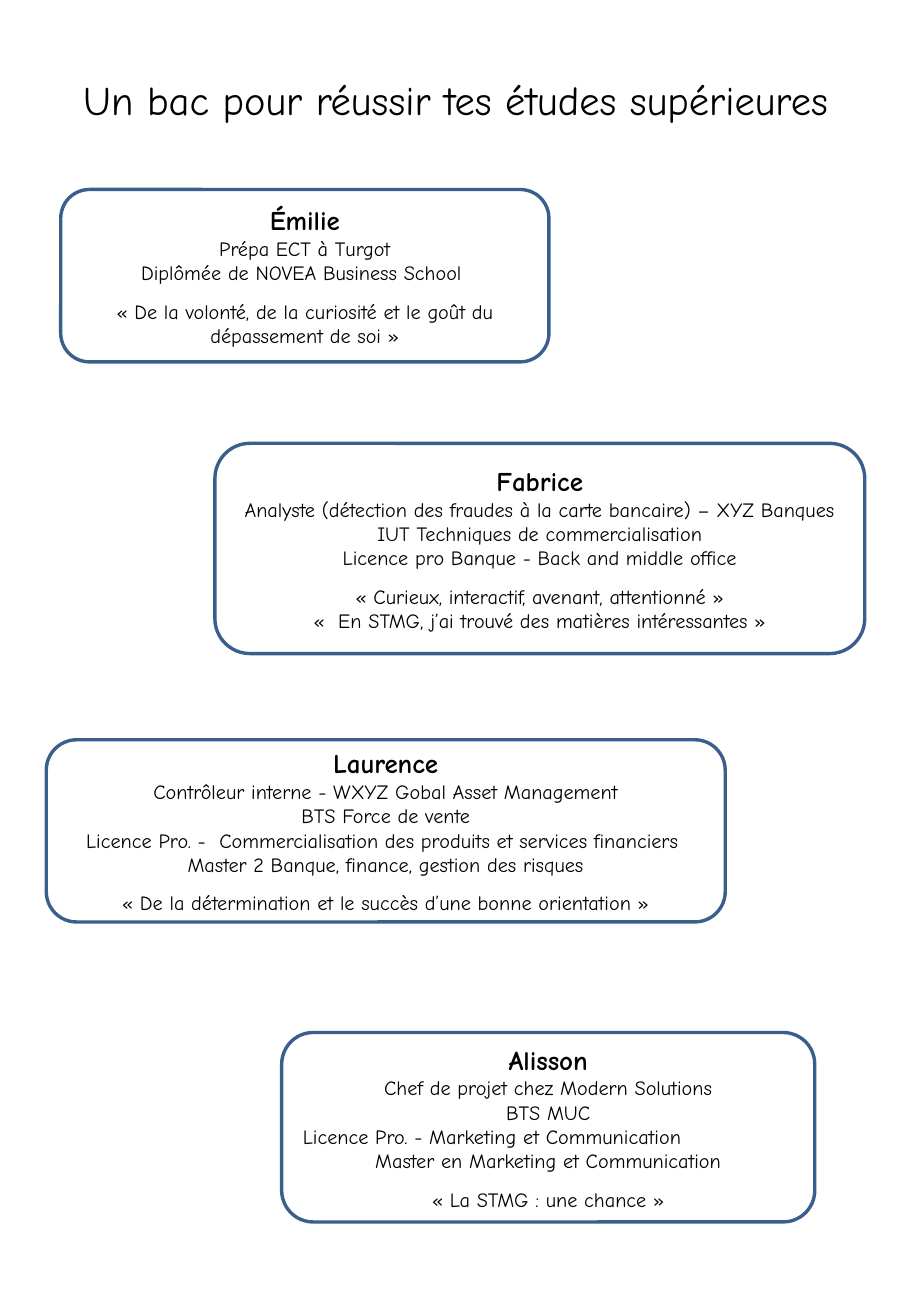
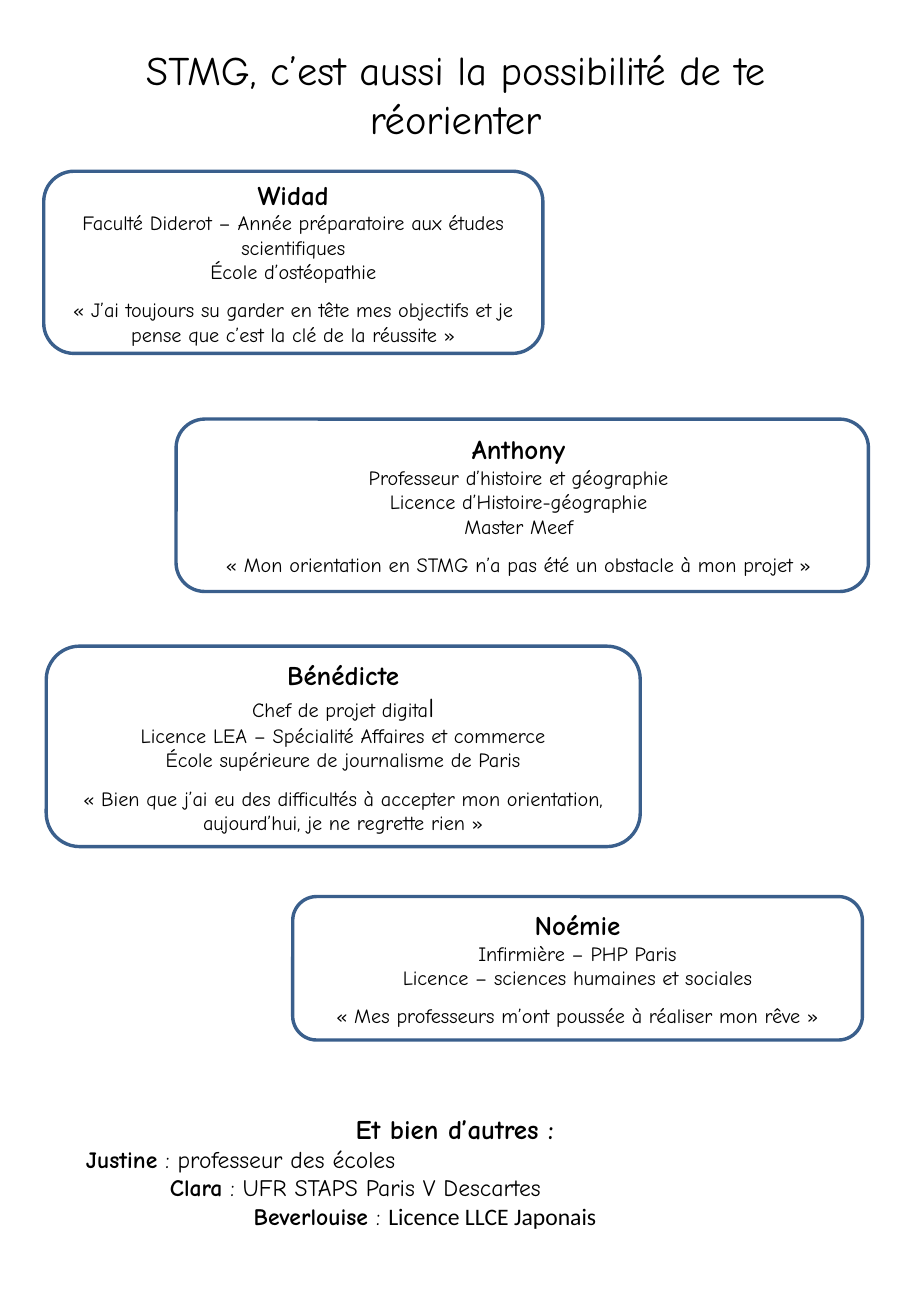
from dataclasses import dataclass

from pptx import Presentation
from pptx.dml.color import RGBColor
from pptx.enum.shapes import MSO_SHAPE
from pptx.enum.text import MSO_ANCHOR, MSO_AUTO_SIZE, PP_ALIGN
from pptx.presentation import Presentation as Deck
from pptx.slide import Slide
from pptx.text.text import TextFrame
from pptx.util import Pt

ROUNDED = MSO_SHAPE.ROUNDED_RECTANGLE
MIDDLE = MSO_ANCHOR.MIDDLE
LEFT, CENTER = PP_ALIGN.LEFT, PP_ALIGN.CENTER
NO_FIT, GROW = MSO_AUTO_SIZE.NONE, MSO_AUTO_SIZE.SHAPE_TO_FIT_TEXT

BLACK = RGBColor(0x00, 0x00, 0x00)
BORDER = RGBColor(0x3A, 0x5F, 0x8C)
FONT = "Comic Neue"
ALT_FONT = "Calibri"
NBSP = chr(160)

TITLE_SIZE, NAME_SIZE, LIST_SIZE, BODY_SIZE = 24, 16, 14, 12
QUOTE_GAP = 8.4
LIST_STEP = 49.7
TITLE_ONLY = 5


@dataclass
class Line:
    text: str
    align: PP_ALIGN = CENTER
    large_end: str = ""


@dataclass
class Card:
    box: tuple[float, float, float, float]
    name: str
    lines: list[str | Line]
    quotes: list[str]
    insets: tuple[float, float, float, float] = (7.2, 3.6, 7.2, 3.6)


@dataclass
class Alumna:
    name: str
    studies: str
    font: str = FONT


STUDY_CARDS = [
    Card((36, 112.3, 289.4, 102.2), "Émilie",
         ["Prépa ECT à Turgot", "Diplômée de NOVEA Business School "],
         ["De la volonté, de la curiosité et le goût du dépassement de soi"]),
    Card((127.4, 262.8, 385.2, 124.6), "Fabrice",
         ["Analyste (détection des fraudes à la carte bancaire) – XYZ Banques",
          "IUT Techniques de commercialisation",
          "Licence pro Banque - Back and middle office"],
         ["Curieux, interactif, avenant, attentionné",
          " En STMG, j’ai trouvé des matières intéressantes"]),
    Card((27.4, 438.5, 402.5, 108), "Laurence",
         ["Contrôleur interne - WXYZ Gobal Asset Management",
          "BTS Force de vente",
          "Licence Pro. -  Commercialisation des produits et services financiers ",
          "Master 2 Banque, finance, gestion des risques"],
         ["De la détermination et le succès d’une bonne orientation"],
         insets=(2.9, 3.6, 2.9, 3.6)),
    Card((167, 612, 316, 112.3), "Alisson",
         ["Chef de projet chez Modern Solutions",
          "BTS MUC",
          Line("Licence Pro. - Marketing et Communication", LEFT),
          "Master en Marketing et Communication"],
         ["La STMG : une chance"]),
]

REORIENTATION_CARDS = [
    Card((25.9, 101.5, 295.9, 108), "Widad",
         ["Faculté Diderot – Année préparatoire aux études scientifiques",
          "École d’ostéopathie"],
         ["J’ai toujours su garder en tête mes objectifs et je pense que "
          "c’est la clé de la réussite"]),
    Card((104.4, 248.4, 410.4, 102.2), "Anthony",
         ["Professeur d’histoire et géographie",
          "Licence d’Histoire-géographie",
          "Master Meef"],
         ["Mon orientation en STMG n’a pas été un obstacle à mon projet"],
         insets=(2.9, 2.9, 7.2, 3.6)),
    Card((27.4, 383, 352.1, 118.8), "Bénédicte",
         [Line("Chef de projet digita", large_end="l"),
          "Licence LEA – Spécialité Affaires et commerce",
          "École supérieure de journalisme de Paris"],
         ["Bien que j’ai eu des difficultés à accepter mon orientation, "
          "aujourd’hui, je ne regrette rien"]),
    Card((173.5, 531.4, 337.7, 85), "Noémie",
         ["Infirmière – PHP Paris", "Licence – sciences humaines et sociales"],
         ["Mes professeurs m’ont poussée à réaliser mon rêve"]),
]

ALUMNAE = [
    Alumna("Justine", "professeur des écoles"),
    Alumna("Clara", "UFR STAPS Paris V Descartes"),
    Alumna("Beverlouise", "Licence LLCE Japonais", ALT_FONT),
]


def add_paragraph(tf: TextFrame, text: str, size: float, bold: bool = False,
                  align: PP_ALIGN = CENTER):
    """Fill the frame's empty first paragraph, or append a new one."""
    p = tf.paragraphs[0] if not tf.text else tf.add_paragraph()
    p.alignment = align
    p.font.name, p.font.size, p.font.bold = FONT, Pt(size), bold
    p.font.color.rgb = BLACK
    if text:
        p.add_run().text = text
    return p


def add_titled_slide(prs: Deck, title: str, top: float) -> Slide:
    s = prs.slides.add_slide(prs.slide_layouts[TITLE_ONLY])
    sp = s.shapes.title
    sp.left, sp.top, sp.width, sp.height = Pt(27), Pt(top), Pt(486), Pt(47.5)
    tf = sp.text_frame
    tf.word_wrap, tf.auto_size, tf.vertical_anchor = True, NO_FIT, MIDDLE
    add_paragraph(tf, title, TITLE_SIZE)
    return s


def add_card(s: Slide, card: Card) -> None:
    sp = s.shapes.add_shape(ROUNDED, *map(Pt, card.box))
    sp.shadow.inherit = False
    sp.fill.background()
    sp.line.color.rgb, sp.line.width = BORDER, Pt(2)
    tf = sp.text_frame
    tf.word_wrap, tf.vertical_anchor = True, MIDDLE
    (tf.margin_left, tf.margin_top,
     tf.margin_right, tf.margin_bottom) = map(Pt, card.insets)

    add_paragraph(tf, card.name, NAME_SIZE, bold=True)
    for item in card.lines:
        line = item if isinstance(item, Line) else Line(item)
        p = add_paragraph(tf, line.text, BODY_SIZE, align=line.align)
        if line.large_end:
            r = p.add_run()
            r.text, r.font.size = line.large_end, Pt(NAME_SIZE)
    for i, quote in enumerate(card.quotes):
        p = add_paragraph(tf, f"«{NBSP}{quote}{NBSP}»", BODY_SIZE)
        if i == 0:
            p.space_before = Pt(QUOTE_GAP)


def add_alumnae(s: Slide) -> None:
    """List further alumnae, each line indented one step more."""
    sp = s.shapes.add_textbox(Pt(43.9), Pt(655.9), Pt(451.4), Pt(77.8))
    tf = sp.text_frame
    tf.word_wrap, tf.auto_size = True, GROW
    add_paragraph(tf, "Et bien d’autres :", NAME_SIZE, bold=True)
    for i, alumna in enumerate(ALUMNAE):
        p = add_paragraph(tf, "", LIST_SIZE, align=LEFT)
        p._p.get_or_add_pPr().set("indent", str(Pt(i * LIST_STEP)))
        for text, bold, font in ((alumna.name, True, FONT),
                                 (" : ", False, FONT),
                                 (alumna.studies, False, alumna.font)):
            r = p.add_run()
            r.text, r.font.bold, r.font.name = text, bold, font


def main() -> None:
    prs = Presentation()
    prs.slide_width, prs.slide_height = Pt(540), Pt(780)

    s = add_titled_slide(prs, "Un bac pour réussir tes études supérieures", 35.3)
    for card in STUDY_CARDS:
        add_card(s, card)

    s = add_titled_slide(
        prs, "STMG, c’est aussi la possibilité de te réorienter", 31.7)
    for card in REORIENTATION_CARDS:
        add_card(s, card)
    add_alumnae(s)

    prs.save("out.pptx")


if __name__ == "__main__":
    main()
